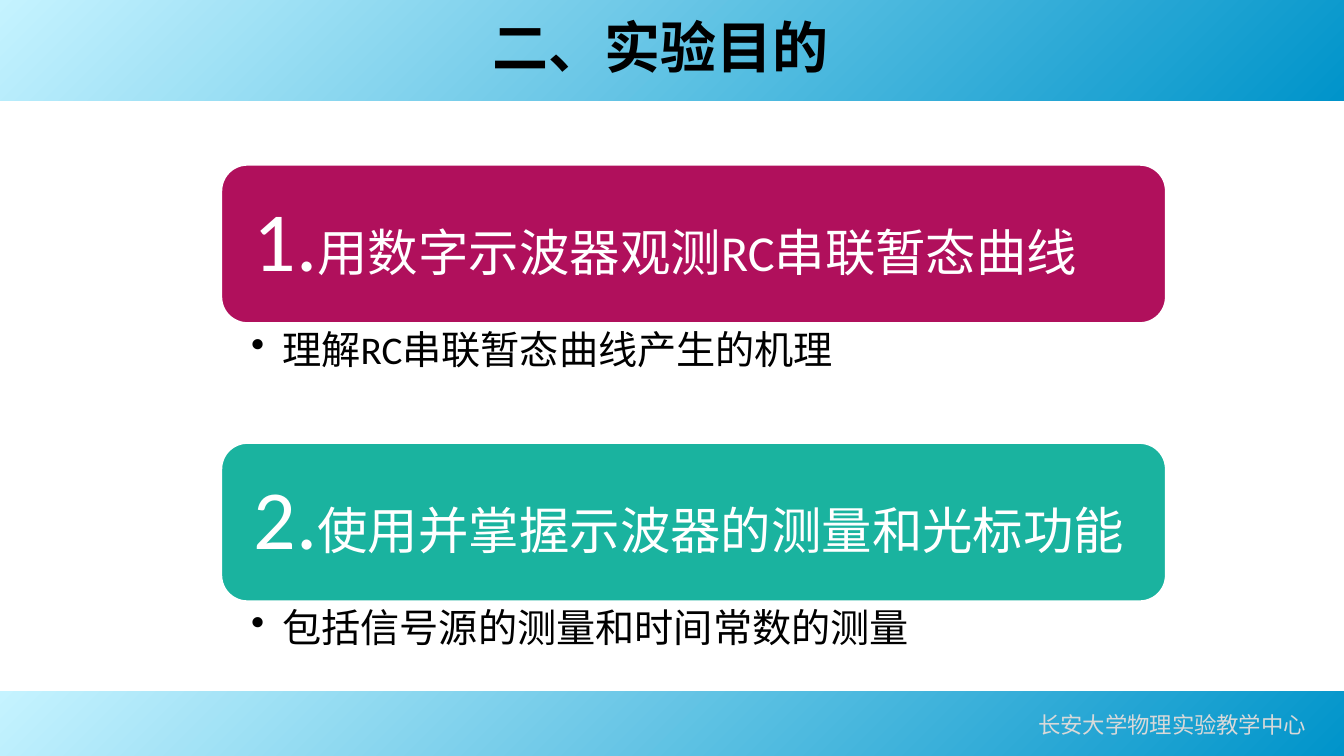
from pptx import Presentation
from pptx.dml.color import RGBColor as Rgb
from pptx.enum.shapes import MSO_SHAPE as Form
from pptx.enum.text import MSO_ANCHOR as Anchor, PP_ALIGN as Align
from pptx.oxml import parse_xml as to_xml
from pptx.oxml.ns import nsdecls, qn
from pptx.util import Inches, Pt

THEME = {
    "cjk": "Noto Sans CJK SC", "latin": "Calibri",
    "ink": "000000", "pale": "D9D9D9", "white": "FFFFFF",
    "fade": [(0, "00688E"), (0, "0094CA"), (100, "C5F3FF"), (100, "00B0F0")],
    "title": 40, "number": 60, "goal": 36, "note": 28, "foot": 16,
}
GOALS = [
    ("1.", "用数字示波器观测RC串联暂态曲线", "理解RC串联暂态曲线产生的机理", "B0105C"),
    ("2.", "使用并掌握示波器的测量和光标功能", "包括信号源的测量和时间常数的测量", "1AB39F"),
]


def part(box, x, y, w, h):
    """Return the part of a box given in percent of its sides."""
    left, top, wide, high = box
    return [int(n) for n in (left + wide * x / 100, top + high * y / 100,
                             wide * w / 100, high * h / 100)]


def assign(thing, **values):
    """Set each named value on a thing."""
    for name, value in values.items():
        setattr(thing, name, value)


def write(para, text, size, color, face, bold=False):
    """Add a run with its font to a paragraph."""
    run = para.add_run()
    run.text = text
    assign(run.font, size=Pt(THEME[size]), name=THEME[face], bold=bold)
    run.font.color.rgb = Rgb.from_string(THEME[color])
    run.font._element.find(qn("a:latin")).addnext(
        to_xml(f'<a:ea {nsdecls("a")} typeface="{THEME["cjk"]}"/>'))


def label(slide, box, **frame):
    """Add a wrapping text box and return its first paragraph."""
    text = slide.shapes.add_textbox(*box).text_frame
    assign(text, word_wrap=True, **frame)
    return text.paragraphs[0]


def band(slide, box):
    """Draw a full-width strip that fades from its lower right corner."""
    strip = slide.shapes.add_shape(Form.RECTANGLE, *box)
    strip.shadow.inherit = False
    strip.line.fill.background()
    stops = "".join(f'<a:gs pos="{pos * 1000}"><a:srgbClr val="{color}"/></a:gs>'
                    for pos, color in THEME["fade"])
    strip._element.spPr.find(qn("a:prstGeom")).addnext(to_xml(
        f'<a:gradFill {nsdecls("a")} rotWithShape="1"><a:gsLst>{stops}</a:gsLst>'
        '<a:path path="circle"><a:fillToRect l="100000" t="100000"/></a:path>'
        '</a:gradFill>'))


def header(slide, box):
    """Draw the top strip and the centred title."""
    band(slide, box)
    para = label(slide, part(box, 17.85, 8, 62.63, 77))
    para.alignment = Align.CENTER
    write(para, "二、实验目的", "title", "ink", "cjk", True)


def footer(slide, box):
    """Draw the bottom strip and the name of the centre."""
    band(slide, box)
    para = label(slide, part(box, 76.5, 23.44, 23.5, 57.81))
    para.alignment = Align.JUSTIFY
    write(para, "长安大学物理实验教学中心", "foot", "pale", "cjk")


def goal(slide, box, number, text, note, color):
    """Draw a coloured card with its goal and a bulleted note below."""
    card = slide.shapes.add_shape(Form.ROUNDED_RECTANGLE, *part(box, 0, 0, 100, 57.25))
    card.shadow.inherit = False
    card.fill.solid()
    card.fill.fore_color.rgb = Rgb.from_string(color)
    card.line.color.rgb = Rgb.from_string(THEME["white"])
    card.line.width = Pt(2)
    sides = ("margin_left", "margin_top", "margin_right", "margin_bottom")
    assign(card.text_frame, word_wrap=True, vertical_anchor=Anchor.MIDDLE,
           **dict.fromkeys(sides, Inches(0.25)))
    para = card.text_frame.paragraphs[0]
    assign(para, alignment=Align.LEFT, line_spacing=0.9)
    write(para, number, "number", "white", "latin")
    write(para, text, "goal", "white", "latin")

    gaps = [Inches(n) for n in (0.3, 0.04, 0.22, 0.04)]
    para = label(slide, part(box, 0, 58.33, 100, 42.75), **dict(zip(sides, gaps)))
    assign(para, line_spacing=0.9, level=1)
    props = para._p.get_or_add_pPr()
    props.set("marL", str(Inches(0.31)))
    props.set("indent", str(-Inches(0.31)))
    props.append(to_xml(f'<a:buChar {nsdecls("a")} char="•"/>'))
    write(para, note, "note", "ink", "latin")


def main():
    """Build the slide and save it."""
    deck = Presentation()
    assign(deck, slide_width=Inches(13.33), slide_height=Inches(7.5))
    slide = deck.slides.add_slide(deck.slide_layouts[6])
    page = (0, 0, deck.slide_width, deck.slide_height)
    footer(slide, part(page, 0, 91.47, 100, 8.53))
    header(slide, part(page, 0, -0.13, 100, 13.4))
    for row, words in enumerate(GOALS):
        goal(slide, part(page, 16.43, 21.73 + 36.8 * row, 70.35, 36.8), *words)
    deck.save("out.pptx")


if __name__ == "__main__":
    main()
